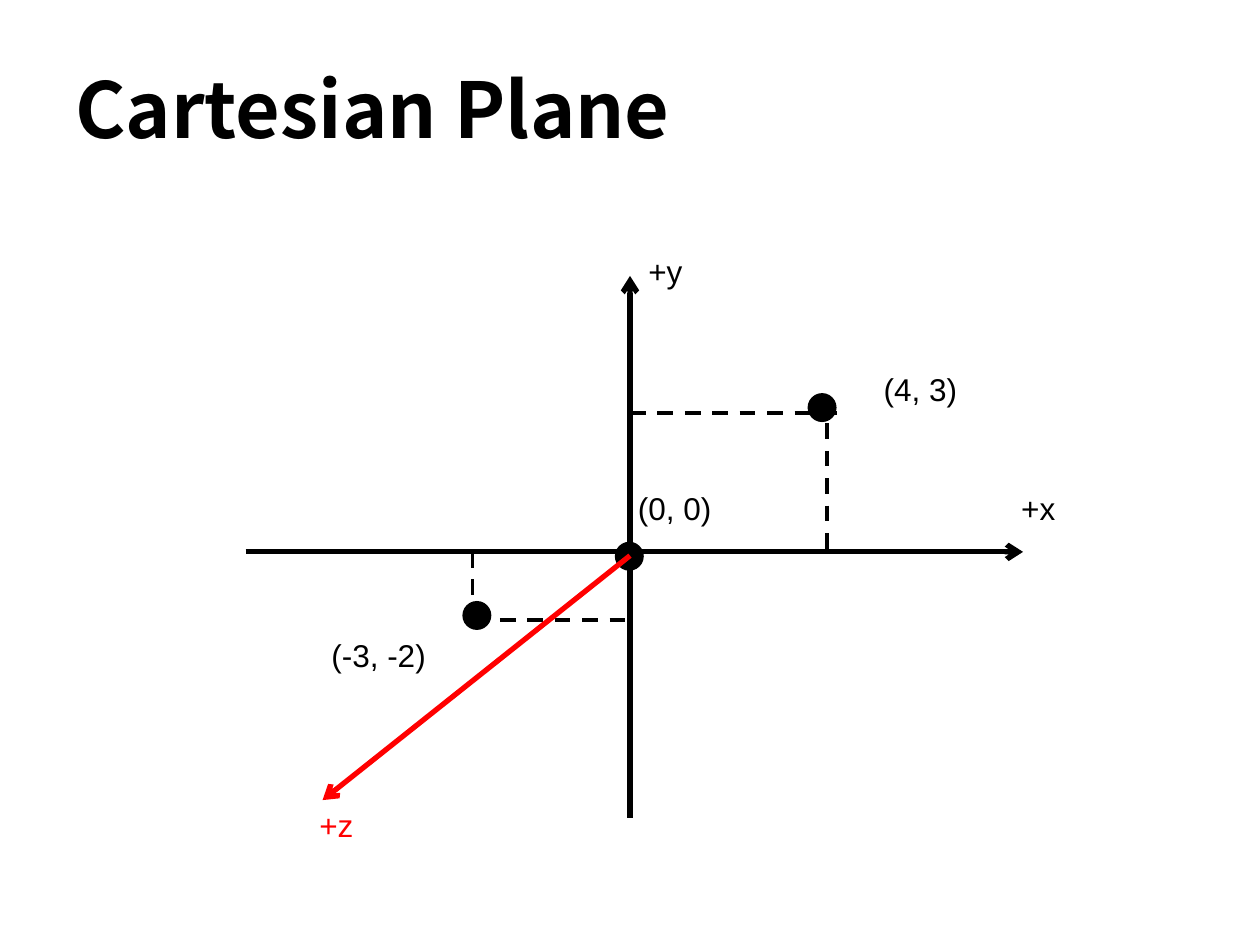
import pptx
import pptx.util
import pptx.dml.color
import pptx.enum.dml
import pptx.enum.shapes
import pptx.enum.text
import pptx.oxml
import pptx.oxml.ns
from lxml import etree

Inches = pptx.util.Inches
Pt = pptx.util.Pt
BLACK = pptx.dml.color.RGBColor(0x00, 0x00, 0x00)
RED = pptx.dml.color.RGBColor(0xFF, 0x00, 0x00)
DASH = pptx.enum.dml.MSO_LINE.DASH
ALIGN = pptx.enum.text.PP_ALIGN
ANCHOR = pptx.enum.text.MSO_ANCHOR
qn = pptx.oxml.ns.qn

TITLE_FONT = {"name": "Noto Sans CJK SC", "size": Pt(44), "bold": True}
LABEL_FONT = {"name": "Arial", "size": Pt(18)}
AXIS_LINE = {"width": Pt(3)}
GUIDE_LINE = {"width": Pt(2.25), "dash_style": DASH}

presentation = pptx.Presentation()
presentation.slide_width = Inches(10)
presentation.slide_height = Inches(7.5)
slide = presentation.slides.add_slide(presentation.slide_layouts[6])


def add_line(start, end, line_format, color=BLACK, arrow=False):
    line = slide.shapes.add_connector(
        pptx.enum.shapes.MSO_CONNECTOR.STRAIGHT,
        *(Inches(value) for value in start + end))
    line.line.color.rgb = color
    for name, value in line_format.items():
        setattr(line.line, name, value)
    if arrow:
        etree.SubElement(line.line._get_or_add_ln(), qn("a:tailEnd"), type="arrow")
    etree.SubElement(line._element.spPr, qn("a:effectLst"))


def add_text(text, box, font_format, color=BLACK, align=ALIGN.CENTER,
             anchor=ANCHOR.TOP):
    frame = slide.shapes.add_textbox(*(Inches(value) for value in box)).text_frame
    frame.word_wrap = True
    frame.vertical_anchor = anchor
    paragraph = frame.paragraphs[0]
    paragraph.alignment = align
    run = paragraph.add_run()
    run.text = text
    run.font.color.rgb = color
    for name, value in font_format.items():
        setattr(run.font, name, value)
    return run


# Title with a soft text shadow
title = add_text("Cartesian Plane", (0.5, 0.17, 9, 1.37), TITLE_FONT,
                 align=ALIGN.LEFT, anchor=ANCHOR.MIDDLE)
title_shadow = pptx.oxml.parse_xml(
    f'<a:effectLst {pptx.oxml.ns.nsdecls("a")}>'
    '<a:outerShdw blurRad="38100" dist="38100" dir="2700000" algn="tl">'
    '<a:srgbClr val="000000"><a:alpha val="43000"/></a:srgbClr>'
    '</a:outerShdw></a:effectLst>')
title._r.rPr.find(qn("a:solidFill")).addnext(title_shadow)

# x and y axes
add_line((1.95, 4.38), (8.12, 4.38), AXIS_LINE, arrow=True)
add_line((5, 6.49), (5, 2.19), AXIS_LINE, arrow=True)

# Dashed guides from the axes to each point
for start, end in [
    ((5, 3.28), (6.64, 3.28)),
    ((6.56, 3.36), (6.56, 4.38)),
    ((3.75, 4.38), (3.75, 4.92)),
    ((3.75, 4.92), (5, 4.92)),
]:
    add_line(start, end, GUIDE_LINE)

# Points: the origin, (4, 3) and (-3, -2)
for left, top in [(4.88, 4.3), (6.41, 3.12), (3.67, 4.77)]:
    point = slide.shapes.add_shape(
        pptx.enum.shapes.MSO_SHAPE.OVAL,
        Inches(left), Inches(top), Inches(0.23), Inches(0.23))
    point.shadow.inherit = False
    point.fill.solid()
    point.fill.fore_color.rgb = BLACK
    point.line.fill.background()

# z axis
add_line((5, 4.41), (2.56, 6.35), AXIS_LINE, RED, arrow=True)

# Labels of points and axes
for text, left, top, width, height, color in [
    ("(0, 0)", 4.77, 3.83, 1.17, 0.51, BLACK),
    ("(4, 3)", 6.72, 2.89, 1.17, 0.51, BLACK),
    ("(-3, -2)", 2.42, 5, 1.17, 0.51, BLACK),
    ("+x", 7.73, 3.83, 1.02, 0.51, BLACK),
    ("+y", 4.77, 1.95, 1.02, 0.51, BLACK),
    ("+z", 2.16, 6.35, 1.02, 0.4, RED),
]:
    add_text(text, (left, top, width, height), LABEL_FONT, color)

presentation.save("out.pptx")
